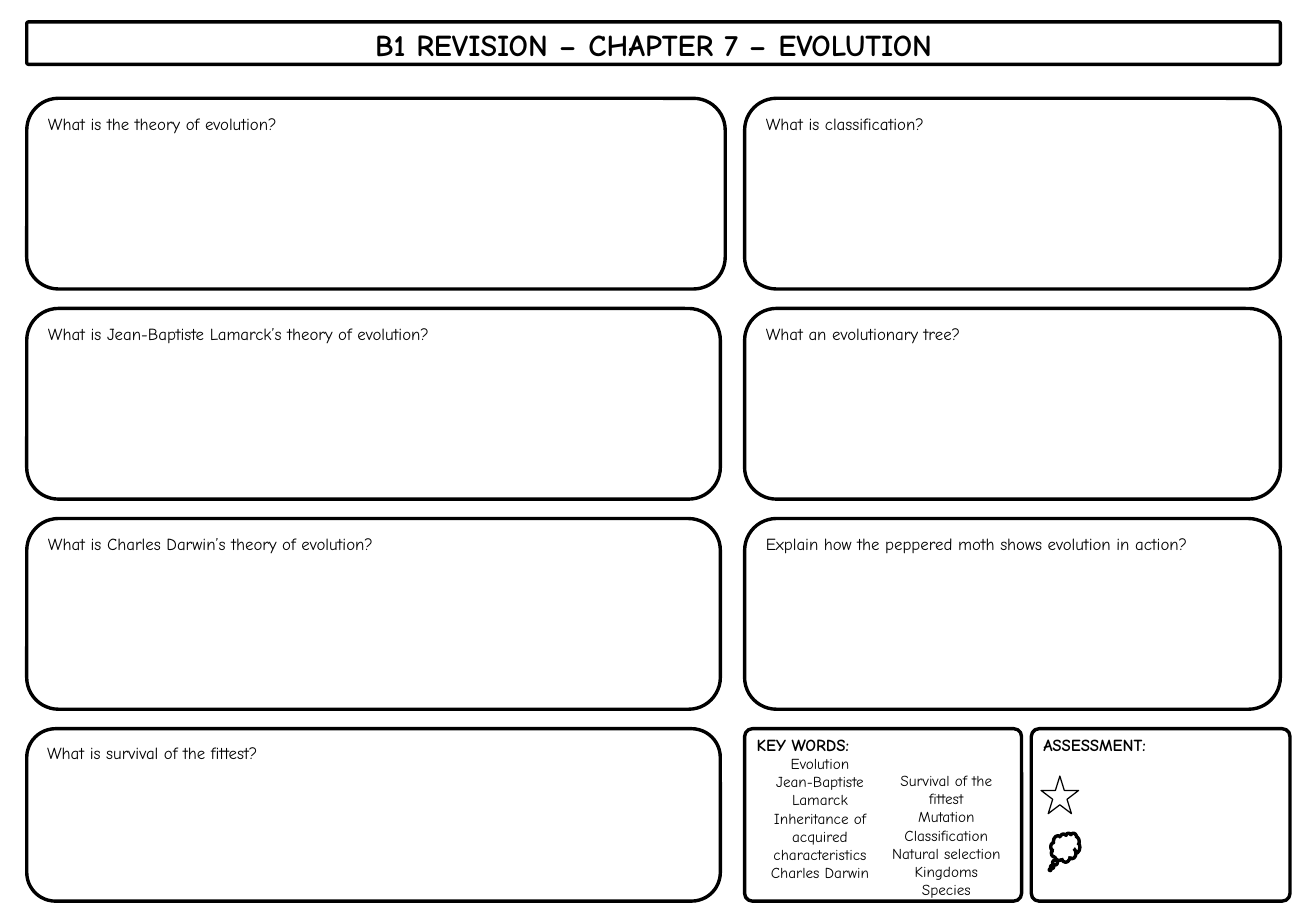
from pptx import Presentation
from pptx.dml.color import RGBColor
from pptx.enum.shapes import MSO_SHAPE
from pptx.enum.text import MSO_ANCHOR, PP_ALIGN
from pptx.util import Inches, Pt

ROUNDED = MSO_SHAPE.ROUNDED_RECTANGLE
STAR = MSO_SHAPE.STAR_5_POINT
CLOUD = MSO_SHAPE.CLOUD_CALLOUT
LEFT, CENTER = PP_ALIGN.LEFT, PP_ALIGN.CENTER
TOP = MSO_ANCHOR.TOP
FONT = "Comic Neue"
BLACK, WHITE = "000000", "FFFFFF"
FRAME_CORNER = 0.045

ROW_TOP, ROW_STEP = 0.81, 1.73
ROW_HEIGHT, LAST_HEIGHT = 1.57, 1.42
LAST_TOP = 6
LEFT_X, RIGHT_X = 0.22, 6.13
QUESTIONS = [
    (LEFT_X, 5.75, 0, "What is the theory of evolution?"),
    (RIGHT_X, 4.41, 0, "What is classification?"),
    (LEFT_X, 5.71, 1, "What is Jean-Baptiste Lamarck’s theory of evolution?"),
    (RIGHT_X, 4.41, 1, "What an evolutionary tree?"),
    (LEFT_X, 5.71, 2, "What is Charles Darwin’s theory of evolution?"),
    (RIGHT_X, 4.41, 2, "Explain how the peppered moth shows evolution in action?"),
]
KEY_WORDS = [
    ["Evolution", "Jean-Baptiste Lamarck",
     "Inheritance of acquired characteristics", "Charles Darwin"],
    ["Survival of the fittest", "Mutation", "Classification",
     "Natural selection", "Kingdoms", "Species"],
]


def color(value):
    return RGBColor.from_string(value)


def write(s, lines, size, bold=False, align=LEFT):
    tf = s.text_frame
    tf.word_wrap = True
    tf.vertical_anchor = TOP
    for i, line in enumerate(lines):
        p = tf.paragraphs[0] if i == 0 else tf.add_paragraph()
        p.alignment = align
        r = p.add_run()
        r.text = line
        for name, value in {"name": FONT, "size": Pt(size), "bold": bold}.items():
            setattr(r.font, name, value)
        r.font.color.rgb = color(BLACK)


def add_text(slide, x, y, w, h, lines, size, **style):
    s = slide.shapes.add_textbox(Inches(x), Inches(y), Inches(w), Inches(h))
    write(s, lines, size, **style)


def add_outline(slide, kind, x, y, w, h, adjustments=(), fill=None, weight=2):
    s = slide.shapes.add_shape(kind, Inches(x), Inches(y), Inches(w), Inches(h))
    s.shadow.inherit = False
    for i, value in enumerate(adjustments):
        s.adjustments[i] = value
    if fill:
        s.fill.solid()
        s.fill.fore_color.rgb = color(fill)
    else:
        s.fill.background()
    s.line.color.rgb = color(BLACK)
    s.line.width = Pt(weight)
    return s


def add_title(slide, x, y, w, h):
    add_outline(slide, ROUNDED, x, y, w, h, [FRAME_CORNER])
    add_text(slide, x, y - 0.01, w, 0.4, ["B1 REVISION – CHAPTER 7 – EVOLUTION"], 18,
             bold=True, align=CENTER)


def add_question(slide, x, y, w, h, question):
    s = add_outline(slide, ROUNDED, x, y, w, h, fill=WHITE)
    write(s, [question], 10)


def add_panel(slide, x, y, w, h, heading):
    add_outline(slide, ROUNDED, x, y, w, h, [FRAME_CORNER])
    add_text(slide, x, y, w, 0.27, [heading], 10, bold=True)


def add_key_words(slide, x, y, w, h):
    add_panel(slide, x, y, w, h, "KEY WORDS:")
    column = (w - 0.2) / 2
    for i, (words, top) in enumerate(zip(KEY_WORDS, (0.16, 0.3))):
        add_text(slide, x + i * column, y + top, column + 0.2, h - top, words, 9,
                 align=CENTER)


def add_assessment(slide, x, y, w, h):
    add_panel(slide, x, y, w, h, "ASSESSMENT:")
    add_outline(slide, STAR, x + 0.08, y + 0.39, 0.31, 0.31, weight=0.75)
    add_outline(slide, CLOUD, x + 0.16, y + 0.86, 0.24, 0.24, [-0.52, 0.76])


def main():
    prs = Presentation()
    prs.slide_width = Inches(65 / 6)
    prs.slide_height = Inches(7.6)
    slide = prs.slides.add_slide(prs.slide_layouts[6])
    add_title(slide, LEFT_X, 0.18, 10.32, 0.35)
    for x, w, row, question in QUESTIONS:
        add_question(slide, x, ROW_TOP + row * ROW_STEP, w, ROW_HEIGHT, question)
    add_question(slide, LEFT_X, LAST_TOP, 5.71, LAST_HEIGHT,
                 "What is survival of the fittest?")
    add_key_words(slide, RIGHT_X, LAST_TOP, 2.28, LAST_HEIGHT)
    add_assessment(slide, 8.49, LAST_TOP, 2.13, LAST_HEIGHT)
    prs.save("out.pptx")


if __name__ == "__main__":
    main()
